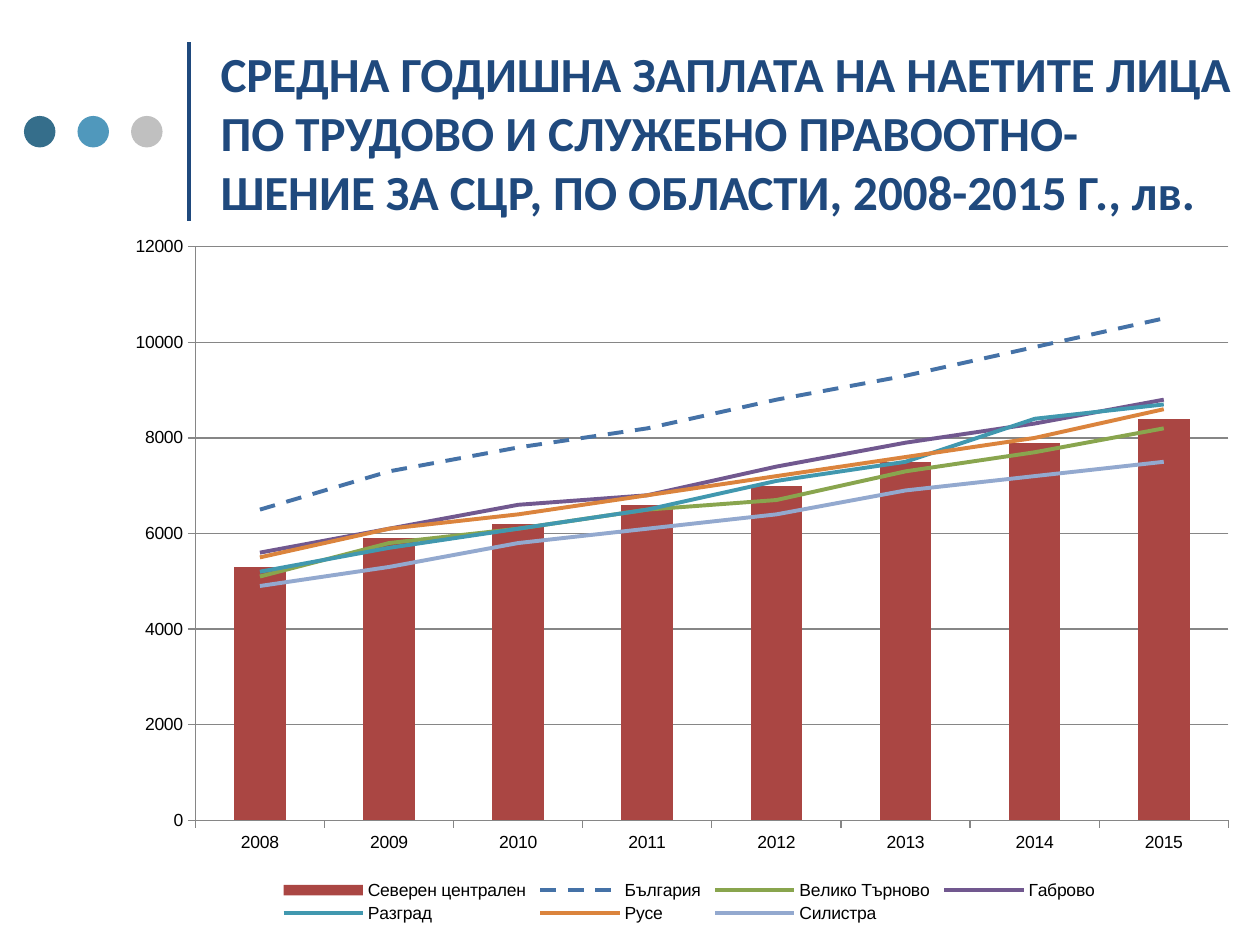
from lxml.etree import SubElement
from pptx import Presentation
from pptx.chart.data import CategoryChartData
from pptx.dml.color import RGBColor
from pptx.enum.chart import XL_CHART_TYPE, XL_LEGEND_POSITION, XL_MARKER_STYLE, XL_TICK_MARK
from pptx.enum.dml import MSO_LINE
from pptx.enum.shapes import MSO_CONNECTOR, MSO_SHAPE
from pptx.enum.text import MSO_ANCHOR, MSO_AUTO_SIZE, PP_ALIGN
from pptx.oxml import parse_xml
from pptx.oxml.ns import nsdecls, qn
from pptx.util import Inches, Pt

NAVY = "1F497D"
GRAY = "868686"


def color(hex_code):
    return RGBColor.from_string(hex_code)


def place(element, index, inner, **box):
    """Give a chart part a fixed place, in fractions of the chart."""
    for old in element.findall(qn("c:layout")):
        element.remove(old)
    layout = parse_xml(f'<c:layout {nsdecls("c")}/>')
    manual = SubElement(layout, qn("c:manualLayout"))
    if inner:
        SubElement(manual, qn("c:layoutTarget"), val="inner")
    for side in "xy":
        SubElement(manual, qn(f"c:{side}Mode"), val="edge")
    for key, value in box.items():
        SubElement(manual, qn(f"c:{key}"), val=str(value))
    element.insert(index, layout)


prs = Presentation()
prs.slide_width, prs.slide_height = Inches(10), Inches(7.5)
slide = prs.slides.add_slide(prs.slide_layouts[5])

# Divider and three dots left of the title
divider = slide.shapes.add_connector(
    MSO_CONNECTOR.STRAIGHT, Inches(1.5), Inches(1.75), Inches(1.5), Inches(0.33))
divider.line.color.rgb = color(NAVY)
divider.line.width = Pt(2)
SubElement(divider._element.spPr, qn("a:effectLst"))

for i, dot_color in enumerate(["356E8B", "5098BC", "C0C0C0"]):
    dot = slide.shapes.add_shape(
        MSO_SHAPE.OVAL, Inches(0.19 + i * 0.425), Inches(0.92), Inches(0.25), Inches(0.25))
    dot.shadow.inherit = False
    dot.fill.solid()
    dot.fill.fore_color.rgb = color(dot_color)
    dot.line.fill.background()

# Title
title = slide.shapes.title
title.left, title.top = Inches(1.67), Inches(0.21)
title.width, title.height = Inches(8.18), Inches(1.67)
title.text = ("СРЕДНА ГОДИШНА ЗАПЛАТА НА НАЕТИТЕ ЛИЦА ПО ТРУДОВО И СЛУЖЕБНО "
              "ПРАВООТНО-ШЕНИЕ ЗА СЦР, ПО ОБЛАСТИ, 2008-2015 Г., лв.")
frame_format = {
    "word_wrap": True, "auto_size": MSO_AUTO_SIZE.NONE, "vertical_anchor": MSO_ANCHOR.MIDDLE,
    "margin_left": Inches(0.08), "margin_right": Inches(0.08),
    "margin_top": Inches(0.08), "margin_bottom": Inches(0.08),
}
for name, value in frame_format.items():
    setattr(title.text_frame, name, value)
heading = title.text_frame.paragraphs[0]
heading.alignment = PP_ALIGN.LEFT
for name, value in {"name": "Calibri", "size": Pt(28), "bold": True}.items():
    setattr(heading.runs[0].font, name, value)
heading.runs[0].font.color.rgb = color(NAVY)

# Salaries: the region as columns, the country and the districts as lines
salaries = [
    ("Северен централен", "AA4643", [5300, 5900, 6200, 6600, 7000, 7500, 7900, 8400]),
    ("България", "4572A7", [6500, 7300, 7800, 8200, 8800, 9300, 9900, 10500]),
    ("Велико Търново", "89A54E", [5100, 5800, 6100, 6500, 6700, 7300, 7700, 8200]),
    ("Габрово", "71588F", [5600, 6100, 6600, 6800, 7400, 7900, 8300, 8800]),
    ("Разград", "4198AF", [5200, 5700, 6100, 6500, 7100, 7500, 8400, 8700]),
    ("Русе", "DB843D", [5500, 6100, 6400, 6800, 7200, 7600, 8000, 8600]),
    ("Силистра", "93A9CF", [4900, 5300, 5800, 6100, 6400, 6900, 7200, 7500]),
]
data = CategoryChartData(number_format="0")
data.categories = [str(year) for year in range(2008, 2016)]
for area, _, values in salaries:
    data.add_series(area, values)
chart = slide.shapes.add_chart(
    XL_CHART_TYPE.COLUMN_CLUSTERED, Inches(0.92), Inches(1.79),
    Inches(9.01), Inches(5.62), data).chart
chart.has_title = False
chart.font.name, chart.font.size = "Arial", Pt(10)
chart.font.color.rgb = color("000000")

# Move every series but the first into a line chart on the same axes
columns = chart.plots[0]
columns.gap_width = 150
columns.vary_by_categories = False
bar_chart = columns._element
line_chart = parse_xml(
    f'<c:lineChart {nsdecls("c")}><c:grouping val="standard"/><c:varyColors val="0"/></c:lineChart>')
for series in bar_chart.findall(qn("c:ser"))[1:]:
    for bar_only in series.findall(qn("c:invertIfNegative")):
        series.remove(bar_only)
    line_chart.append(series)
SubElement(line_chart, qn("c:marker"), val="1")
for axis_id in bar_chart.findall(qn("c:axId")):
    SubElement(line_chart, qn("c:axId"), val=axis_id.get("val"))
bar_chart.addnext(line_chart)

# Series colours
region = columns.series[0]
region.format.fill.solid()
region.format.fill.fore_color.rgb = color(salaries[0][1])
for line, (area, line_color, _) in zip(chart.plots[1].series, salaries[1:]):
    line.smooth = False
    line.marker.style = XL_MARKER_STYLE.NONE
    line.format.line.color.rgb = color(line_color)
    line.format.line.width = Pt(2.25)
    if area == "България":
        line.format.line.dash_style = MSO_LINE.DASH

# Axes, gridlines and legend
years, leva = chart.category_axis, chart.value_axis
leva.minimum_scale, leva.maximum_scale, leva.major_unit = 0, 12000, 2000
leva.has_major_gridlines = True
leva.tick_labels.number_format = "0"
leva.tick_labels.number_format_is_linked = False
for axis in (years, leva):
    axis.major_tick_mark = XL_TICK_MARK.OUTSIDE
for ruled in (years, leva, leva.major_gridlines):
    ruled.format.line.color.rgb = color(GRAY)
    ruled.format.line.width = Pt(0.75)
chart.has_legend = True
chart.legend.position = XL_LEGEND_POSITION.BOTTOM
chart.legend.include_in_layout = False
place(chart._chartSpace.chart.plotArea, 0, True, x=0.07, y=0.03, w=0.91, h=0.81)
place(chart.legend._element, 1, False, x=0.14, y=0.92, w=0.73, h=0.07)

prs.save("out.pptx")
